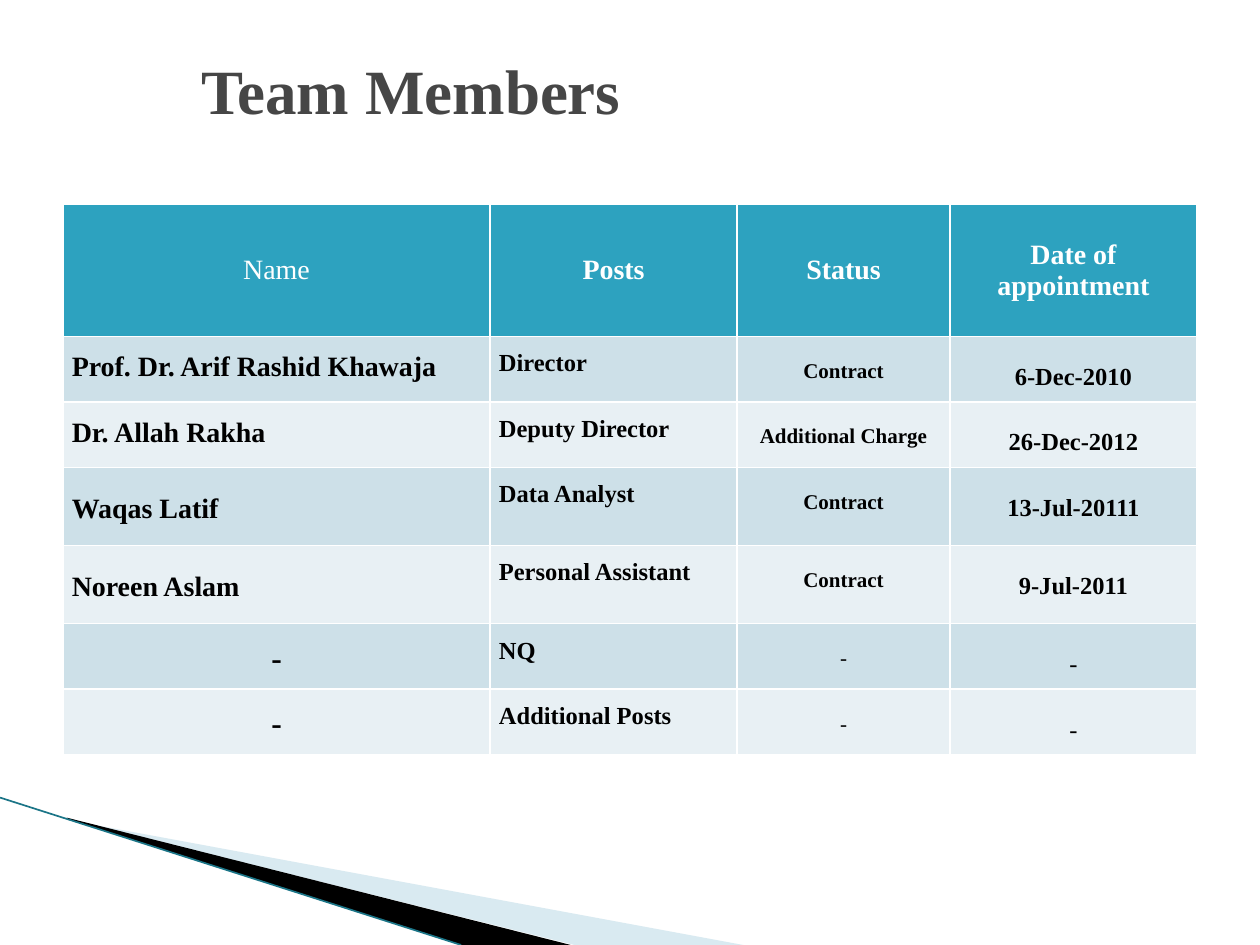
import pptx
import pptx.dml.color
import pptx.enum.shapes
import pptx.enum.text
import pptx.oxml
import pptx.oxml.ns
import pptx.util
from lxml import etree

RGBColor = pptx.dml.color.RGBColor
Align = pptx.enum.text.PP_ALIGN
Anchor = pptx.enum.text.MSO_ANCHOR

WHITE = RGBColor(0xFF, 0xFF, 0xFF)
BLACK = RGBColor(0x00, 0x00, 0x00)
TITLE_GREY = RGBColor(0x46, 0x46, 0x46)
HEADER_TEAL = RGBColor(0x2D, 0xA2, 0xBF)
BAND_DARK = RGBColor(0xCD, 0xE0, 0xE8)
BAND_LIGHT = RGBColor(0xE8, 0xF0, 0xF4)
WEDGE_BLUE = RGBColor(0xA0, 0xCB, 0xDC)
EDGE_TEAL = RGBColor(0x1B, 0x75, 0x87)

FONT = "Times New Roman"
WIDTH = pptx.util.Inches(10)
HEIGHT = pptx.util.Inches(7.5)

# Percent shares of the slide's width and height
COLUMNS = [33.9, 19.6, 16.9, 19.6]
ROWS = [14, 6.93, 6.93, 8.27, 8.27, 6.93, 6.93]

HEADINGS = ["Name", "Posts", "Status", "Date of appointment"]
MEMBERS = [
    ["Prof. Dr. Arif Rashid Khawaja", "Director", "Contract", "6-Dec-2010"],
    ["Dr. Allah Rakha", "Deputy Director", "Additional Charge", "26-Dec-2012"],
    ["Waqas Latif", "Data Analyst", "Contract", "13-Jul-20111"],
    ["Noreen Aslam", "Personal Assistant", "Contract", "9-Jul-2011"],
    ["-", "NQ", "-", "-"],
    ["-", "Additional Posts", "-", "-"],
]

# Text format of each body column: size, alignment, line spacing
COLUMN_FORMATS = [
    (16, Align.LEFT, 1.5),
    (14, Align.JUSTIFY, 1.5),
    (12, Align.CENTER, 2.0),
    (14, Align.CENTER, 2.0),
]
CENTRED_NAME_ROWS = (3, 4)


def across(share):
    return round(WIDTH * share / 100)


def down(share):
    return round(HEIGHT * share / 100)


def set_attributes(target, values):
    for name, value in values.items():
        setattr(target, name, value)


def write(paragraph, text, size, color, bold):
    run = paragraph.add_run()
    run.text = text
    set_attributes(run.font, {"name": FONT, "size": pptx.util.Pt(size), "bold": bold})
    run.font.color.rgb = color


def add_wedge(slide, points, color, opacity=100):
    start, *others = [(across(x), down(y)) for x, y in points]
    builder = slide.shapes.build_freeform(*start)
    builder.add_line_segments(others, close=True)
    shape = builder.convert_to_shape()
    shape.shadow.inherit = False
    shape.line.fill.background()
    shape.fill.solid()
    shape.fill.fore_color.rgb = color
    if opacity < 100:
        color_element = shape.fill._xPr.find(".//" + pptx.oxml.ns.qn("a:srgbClr"))
        alpha = etree.SubElement(color_element, pptx.oxml.ns.qn("a:alpha"))
        alpha.set("val", str(opacity * 1000))


def add_edge(slide, start, end):
    line = slide.shapes.add_connector(
        pptx.enum.shapes.MSO_CONNECTOR.STRAIGHT,
        across(start[0]), down(start[1]), across(end[0]), down(end[1]))
    line.line.color.rgb = EDGE_TEAL
    line.line.width = pptx.util.Pt(0.95)
    etree.SubElement(line._element.spPr, pptx.oxml.ns.qn("a:effectLst"))


def add_title(slide, text):
    box = slide.shapes.add_textbox(across(15), down(3.33), across(83.3), down(12.27))
    set_attributes(box.text_frame, {"word_wrap": True, "vertical_anchor": Anchor.MIDDLE})
    write(box.text_frame.paragraphs[0], text, 36, TITLE_GREY, True)


def set_borders(cell):
    properties = cell._tc.get_or_add_tcPr()
    for side in ("lnL", "lnR", "lnT", "lnB"):
        properties.append(pptx.oxml.parse_xml(
            f'<a:{side} {pptx.oxml.ns.nsdecls("a")} w="{pptx.util.Pt(1)}">'
            f'<a:solidFill><a:srgbClr val="{WHITE}"/></a:solidFill></a:{side}>'))


def fill_cell(cell, text, fill, size, alignment, spacing, anchor, color, bold):
    set_borders(cell)
    cell.fill.solid()
    cell.fill.fore_color.rgb = fill
    side_margin = pptx.util.Inches(0.07)
    set_attributes(cell, {
        "margin_left": side_margin, "margin_right": side_margin,
        "margin_top": 0, "margin_bottom": 0, "vertical_anchor": anchor})
    paragraph = cell.text_frame.paragraphs[0]
    set_attributes(paragraph, {"alignment": alignment, "line_spacing": spacing})
    write(paragraph, text, size, color, bold)


def add_member_table(slide):
    frame = slide.shapes.add_table(
        len(ROWS), len(COLUMNS), across(5), down(21.6),
        across(sum(COLUMNS)), down(sum(ROWS)))
    table = frame.table
    for column, share in zip(table.columns, COLUMNS):
        column.width = across(share)
    for row, share in zip(table.rows, ROWS):
        row.height = down(share)

    # Header row
    for index, heading in enumerate(HEADINGS):
        fill_cell(table.cell(0, index), heading, HEADER_TEAL, 16, Align.CENTER,
                  1.0, Anchor.MIDDLE, WHITE, index > 0)

    # Banded body rows
    for row, member in enumerate(MEMBERS, start=1):
        fill = BAND_DARK if row % 2 else BAND_LIGHT
        for column, text in enumerate(member):
            size, alignment, spacing = COLUMN_FORMATS[column]
            anchor = Anchor.TOP
            if column == 0 and text == "-":
                size, alignment = 18, Align.CENTER
            elif column == 0 and row in CENTRED_NAME_ROWS:
                spacing, anchor = 1.15, Anchor.MIDDLE
            bold = column == 0 or text != "-"
            fill_cell(table.cell(row, column), text, fill, size, alignment,
                      spacing, anchor, BLACK, bold)


def main():
    presentation = pptx.Presentation()
    set_attributes(presentation, {"slide_width": WIDTH, "slide_height": HEIGHT})
    slide = presentation.slides.add_slide(presentation.slide_layouts[6])

    # Corner decoration
    add_wedge(slide, [(5.5, 86.8), (59, 100), (45.6, 100), (5.5, 86.67)], WEDGE_BLUE, 40)
    add_wedge(slide, [(5.3, 86.53), (45.3, 100), (36.6, 100), (5.4, 86.67)], BLACK)
    add_edge(slide, (0, 84.4), (36.6, 100))

    # Content
    add_title(slide, "Team Members")
    add_member_table(slide)
    presentation.save("out.pptx")


if __name__ == "__main__":
    main()
